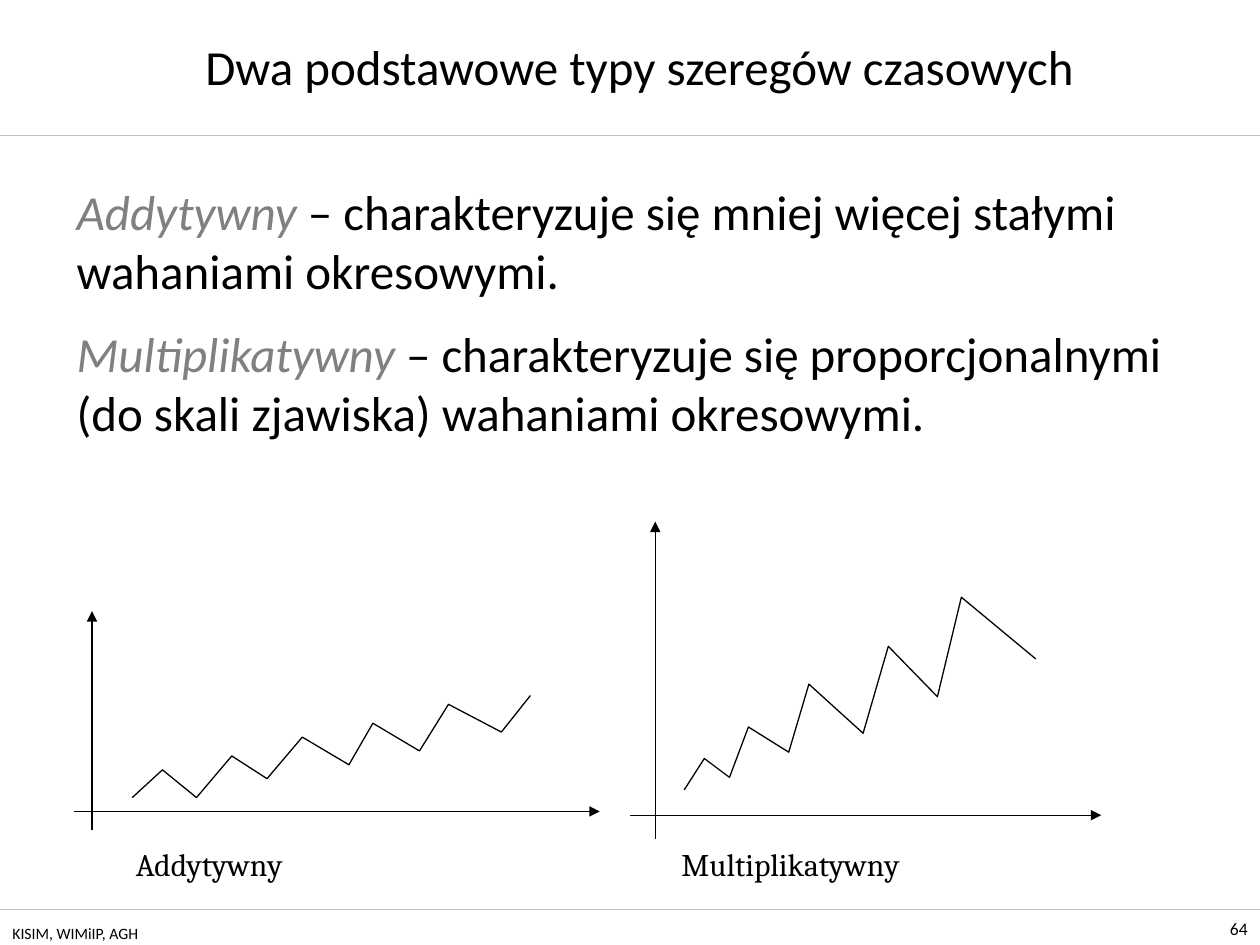
from dataclasses import dataclass

from lxml.etree import SubElement
from pptx import Presentation
from pptx.dml.color import RGBColor
from pptx.enum.shapes import MSO_CONNECTOR
from pptx.enum.text import MSO_ANCHOR, PP_ALIGN
from pptx.oxml.ns import qn
from pptx.util import Inches, Pt

BLACK, GREY, RULE_GREY = "000000", "808080", "C0C0C0"
Point = tuple[float, float]


@dataclass
class SeriesSketch:
    label: str
    label_box: tuple[float, float, float, float]
    origin: Point  # where the axes cross
    left: float
    right: float
    top: float
    bottom: float
    points: list[Point]


SKETCHES = [
    SeriesSketch(
        "Addytywny", (0.98, 6.66, 1.45, 0.4),
        origin=(0.73, 6.44), left=0.59, right=4.76, top=4.85, bottom=6.59,
        points=[(1.05, 6.33), (1.29, 6.11), (1.56, 6.33), (1.84, 6), (2.12, 6.18),
                (2.4, 5.85), (2.77, 6.07), (2.96, 5.74), (3.33, 5.96),
                (3.56, 5.59), (3.98, 5.81), (4.21, 5.52)]),
    SeriesSketch(
        "Multiplikatywny", (5.31, 6.66, 2.02, 0.4),
        origin=(5.2, 6.47), left=5, right=8.74, top=4.14, bottom=6.66,
        points=[(5.43, 6.27), (5.59, 6.02), (5.79, 6.17), (5.94, 5.77), (6.26, 5.97),
                (6.42, 5.43), (6.85, 5.82), (7.05, 5.13), (7.44, 5.53),
                (7.63, 4.74), (8.22, 5.23)]),
]

DEFINITIONS = [
    ("Addytywny", " – charakteryzuje się mniej więcej stałymi wahaniami okresowymi."),
    ("Multiplikatywny",
     " – charakteryzuje się proporcjonalnymi (do skali zjawiska) wahaniami okresowymi."),
]


def rgb(color: str) -> RGBColor:
    return RGBColor.from_string(color)


def style_font(font, size: float, color: str = BLACK, name: str = "Calibri") -> None:
    font.size, font.name = Pt(size), name
    font.color.rgb = rgb(color)


def add_text(slide, box, text: str, size: float, name: str = "Calibri", wrap: bool = True):
    frame = slide.shapes.add_textbox(*map(Inches, box)).text_frame
    frame.word_wrap = wrap
    frame.text = text
    style_font(frame.paragraphs[0].runs[0].font, size, name=name)
    return frame


def add_line(slide, start: Point, end: Point, color: str = BLACK,
             width: float = 0.75, arrow: bool = False) -> None:
    line = slide.shapes.add_connector(
        MSO_CONNECTOR.STRAIGHT, *map(Inches, (*start, *end)))
    line.line.color.rgb = rgb(color)
    line.line.width = Pt(width)
    if arrow:
        SubElement(line.line._get_or_add_ln(), qn("a:tailEnd"), type="triangle")
    SubElement(line._element.spPr, qn("a:effectLst"))


def add_sketch(slide, sketch: SeriesSketch) -> None:
    x, y = sketch.origin
    add_line(slide, (x, sketch.bottom), (x, sketch.top), arrow=True)
    add_line(slide, (sketch.left, y), (sketch.right, y), arrow=True)
    # The builder keeps whole units only, so its points are lengths
    first, *rest = [(Inches(px), Inches(py)) for px, py in sketch.points]
    builder = slide.shapes.build_freeform(*first)
    builder.add_line_segments(rest, close=False)
    curve = builder.convert_to_shape()
    curve.fill.background()
    curve.line.color.rgb = rgb(BLACK)
    curve.line.width = Pt(0.75)
    curve.shadow.inherit = False
    add_text(slide, sketch.label_box, sketch.label, 18, name="Cambria", wrap=False)


def main() -> None:
    prs = Presentation()
    prs.slide_width, prs.slide_height = Inches(10), Inches(7.5)
    slide = prs.slides.add_slide(prs.slide_layouts[5])

    # Header and footer rules, footer text
    for rule_y in (1.07, 7.22):
        add_line(slide, (0, rule_y), (10, rule_y), RULE_GREY, 0.25)
    number = add_text(slide, (9.49, 7.22, 0.51, 0.28), "64", 10)
    number.vertical_anchor = MSO_ANCHOR.BOTTOM
    number.paragraphs[0].alignment = PP_ALIGN.RIGHT
    add_text(slide, (0, 7.28, 3.17, 0.22), "KISIM, WIMiIP, AGH", 9)

    # Title
    title = slide.shapes.title
    title.left, title.top, title.width, title.height = map(
        Inches, (0.98, 0.21, 8.19, 0.63))
    title.text_frame.text = "Dwa podstawowe typy szeregów czasowych"
    title.text_frame.vertical_anchor = MSO_ANCHOR.MIDDLE
    heading = title.text_frame.paragraphs[0]
    heading.alignment = PP_ALIGN.CENTER
    style_font(heading.runs[0].font, 28)

    # Definitions of the two types
    body = slide.shapes.add_textbox(*map(Inches, (0.51, 1.39, 9, 5.59))).text_frame
    body.word_wrap = True
    for index, (term, meaning) in enumerate(DEFINITIONS):
        paragraph = body.add_paragraph() if index else body.paragraphs[0]
        if index:
            paragraph.space_before = Pt(14)
        for text, color, italic in ((term, GREY, True), (meaning, BLACK, False)):
            run = paragraph.add_run()
            run.text = text
            style_font(run.font, 28, color)
            run.font.italic = italic

    # Sketches of the two series
    for sketch in SKETCHES:
        add_sketch(slide, sketch)

    prs.save("out.pptx")


if __name__ == "__main__":
    main()
